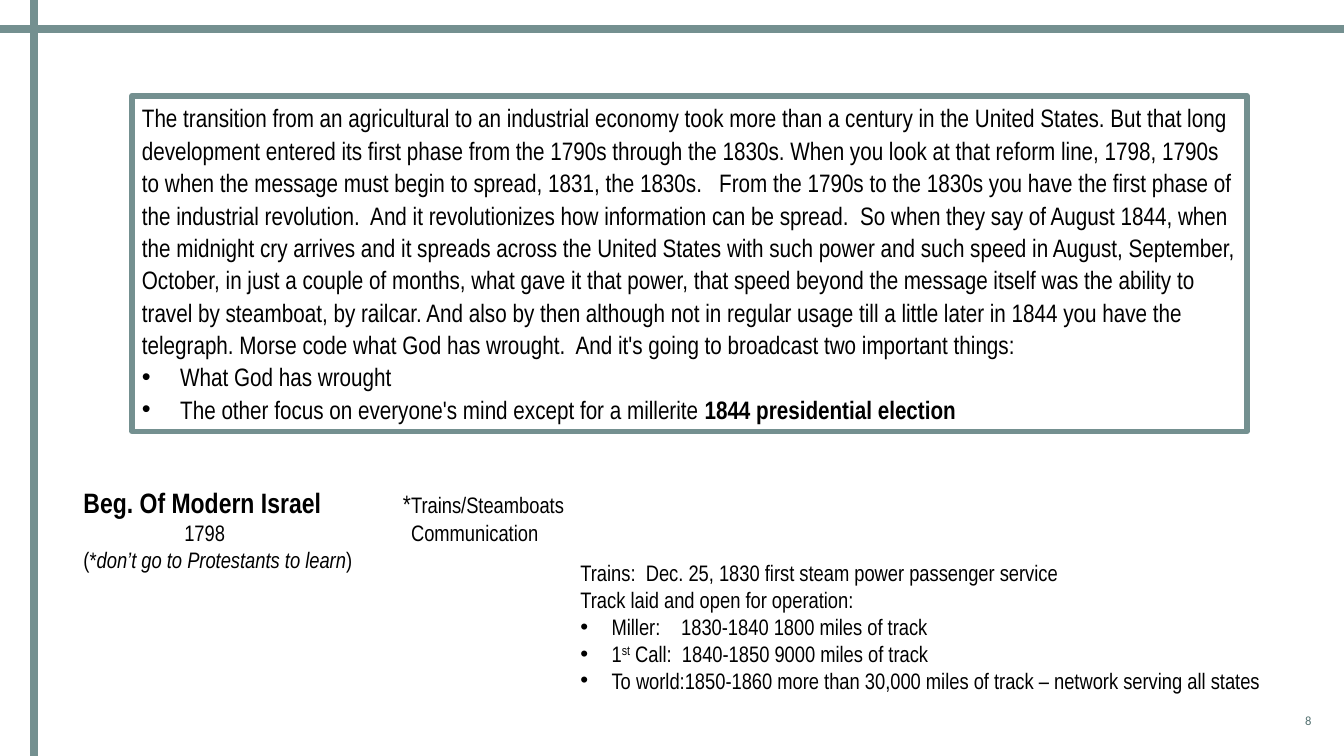
"""Build a slide on the first phase of the industrial revolution and the spread of railways."""
from lxml.etree import SubElement
from pptx import Presentation
from pptx.dml.color import RGBColor
from pptx.enum.shapes import MSO_CONNECTOR, MSO_SHAPE
from pptx.enum.text import MSO_ANCHOR, PP_ALIGN
from pptx.oxml.ns import qn
from pptx.util import Pt

PX = 9144
TEAL = "749090"


def rgb(value):
    return RGBColor.from_string(value)


def add_text(tf, paragraphs, size=16, font="Arial Narrow", color="000000",
             align=PP_ALIGN.LEFT, spacing=None, anchor=MSO_ANCHOR.TOP):
    tf.word_wrap = True
    tf.vertical_anchor = anchor
    for i, (runs, fmt) in enumerate(paragraphs):
        p = tf.paragraphs[0] if i == 0 else tf.add_paragraph()
        p.alignment = align
        p.line_spacing = spacing
        pPr = p._p.get_or_add_pPr()
        if "indent" in fmt:
            pPr.set("marL", str(fmt["indent"] * PX))
            pPr.set("indent", str(-fmt["indent"] * PX))
            SubElement(pPr, qn("a:buFont"), typeface="Arial")
            SubElement(pPr, qn("a:buChar"), char="•")
        if "tabs" in fmt:
            tabs = SubElement(pPr, qn("a:tabLst"))
            for pos in fmt["tabs"]:
                SubElement(tabs, qn("a:tab"), pos=str(pos * PX), algn="l")
        for text, style in runs:
            r = p.add_run()
            r.text = text
            r.font.name = font
            r.font.size = Pt(style.get("size", size))
            r.font.bold = style.get("bold")
            r.font.italic = style.get("italic")
            r.font.color.rgb = rgb(color)
            if "baseline" in style:
                r._r.get_or_add_rPr().set("baseline", str(style["baseline"]))


prs = Presentation()
prs.slide_width, prs.slide_height = 12192000, 6858000
s = prs.slides.add_slide(prs.slide_layouts[6])

sp = s.shapes.add_shape(MSO_SHAPE.RECTANGLE, 131 * PX, 95 * PX, 1106 * PX, 333 * PX)
sp.shadow.inherit = False
sp.fill.background()
sp.line.color.rgb = rgb(TEAL)
sp.line.width = Pt(4)
economy = (
    "The transition from an agricultural to an industrial economy took more than a century "
    "in the United States. But that long development entered its first phase from the 1790s "
    "through the 1830s. When you look at that reform line, 1798, 1790s to when the message "
    "must begin to spread, 1831, the 1830s.   From the 1790s to the 1830s you have the first "
    "phase of the industrial revolution.  And it revolutionizes how information can be "
    "spread.  "
)
message = (
    "So when they say of August 1844, when the midnight cry arrives and it spreads "
    "across the United States with such power and such speed in August, September, October, "
    "in just a couple of months, what gave it that power, that speed beyond the message "
    "itself was the ability to travel by steamboat, by railcar. And also by then although "
    "not in regular usage till a little later in 1844 you have the telegraph. Morse code "
    "what God has wrought.  And it's going to broadcast two important things:"
)
add_text(sp.text_frame, [
    ([(economy, {}), (message, {})], {}),
    ([("What God has wrought", {})], {"indent": 38}),
    ([("The other focus on everyone's mind except for a millerite ", {}),
      ("1844 presidential election", {"bold": True})], {"indent": 38}),
], size=18, spacing=1.07)

for ends in ((0, 29, 1333, 29), (34, 750, 34, 0)):
    line = s.shapes.add_connector(MSO_CONNECTOR.STRAIGHT, *(v * PX for v in ends))
    line.line.color.rgb = rgb(TEAL)
    line.line.width = Pt(6)
    SubElement(line._element.spPr, qn("a:effectLst"))

number = s.shapes.add_textbox(1216 * PX, 695 * PX, 95 * PX, 40 * PX)
add_text(number.text_frame, [([("8", {})], {})], size=9, font="Calibri", color="557272",
         align=PP_ALIGN.RIGHT, anchor=MSO_ANCHOR.MIDDLE)

trains = s.shapes.add_textbox(566 * PX, 550 * PX, 767 * PX, 145 * PX)
add_text(trains.text_frame, [
    ([("Trains:  Dec. 25, 1830 first steam power passenger service", {})], {}),
    ([("Track laid and open for operation:", {})], {}),
    ([("Miller:\t1830-1840 1800 miles of track", {})], {"indent": 31, "tabs": [100]}),
    ([("1", {}), ("st", {"baseline": 30000}),
      (" Call:  1840-1850 9000 miles of track", {})], {"indent": 31}),
    ([("To world:1850-1860 more than 30,000 miles of track – network serving all states", {})],
     {"indent": 31}),
])

israel = s.shapes.add_textbox(73 * PX, 477 * PX, 594 * PX, 98 * PX)
add_text(israel.text_frame, [
    ([("Beg. Of Modern Israel", {"size": 20, "bold": True}), ("\t*", {"size": 18}),
      ("Trains/Steamboats", {})], {"tabs": [317]}),
    ([("\t1798\tCommunication", {})], {"tabs": [100, 325]}),
    ([("(*", {}), ("don’t go to Protestants to learn", {"italic": True}), (")", {})], {}),
])

prs.save("out.pptx")
